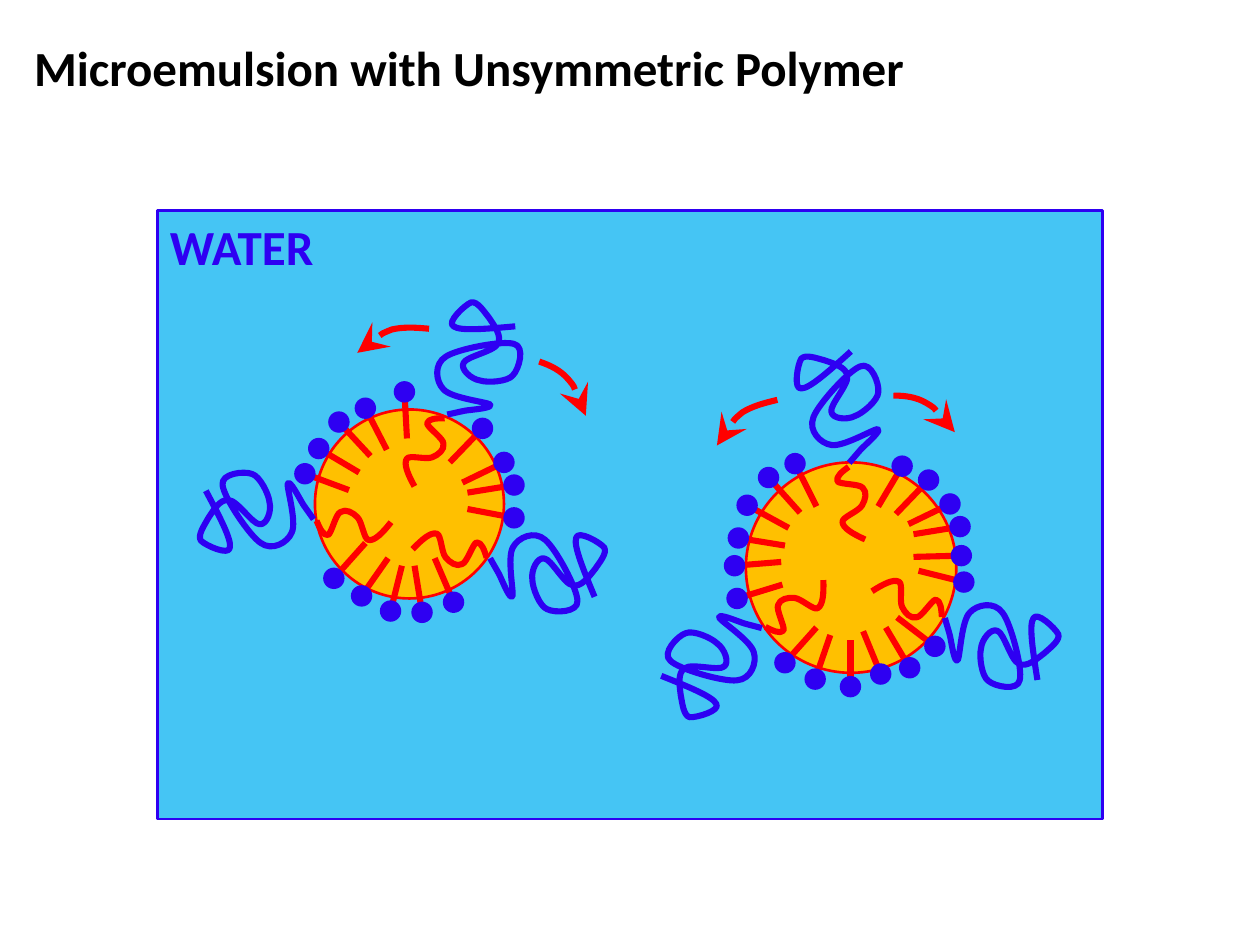
from dataclasses import dataclass

import pptx
import pptx.dml.color
import pptx.enum.shapes
import pptx.enum.text
import pptx.oxml
import pptx.oxml.ns
import pptx.util

Inches = pptx.util.Inches
Pt = pptx.util.Pt
RGBColor = pptx.dml.color.RGBColor
Shape = pptx.enum.shapes.MSO_SHAPE

BLACK = RGBColor(0x00, 0x00, 0x00)
BLUE = RGBColor(0x2E, 0x00, 0xF2)
RED = RGBColor(0xFF, 0x00, 0x00)
GOLD = RGBColor(0xFF, 0xC0, 0x00)
WATER = RGBColor(0x00, 0xB0, 0xF0)

THICK, THIN = 3.5, 1.5
DOT = 0.17

# Curves in inches: a start, then three points for each Bezier piece
CHAIN = [
    (.09, .54), (.04, .45), (0, .36), (.03, .32), (.05, .29), (.18, .33),
    (.23, .31), (.28, .29), (.33, .25), (.32, .2), (.32, .16), (.19, .07),
    (.19, .04), (.2, 0), (.27, 0), (.33, 0),
]
COIL = [
    (.11, .9), (.16, .89), (.2, .88), (.25, .87), (.31, .86), (.48, .85),
    (.45, .82), (.42, .8), (.14, .77), (.08, .7), (.02, .64), (0, .5),
    (.1, .44), (.19, .38), (.55, .31), (.64, .34), (.73, .36), (.68, .54),
    (.63, .59), (.59, .64), (.43, .65), (.37, .63), (.3, .62), (.21, .54),
    (.24, .49), (.26, .44), (.48, .4), (.51, .34), (.55, .28), (.48, .19),
    (.44, .13), (.4, .08), (.35, 0), (.3, .01), (.25, .03), (.1, .17),
    (.16, .2), (.21, .24), (.43, .22), (.65, .2),
]
EAST = [(0, 0), (.09, .03), (.17, .07), (.23, .14), (.29, .21), (.33, .32), (.37, .43)]
WEST = [(.42, 0), (.32, .04), (.23, .08), (.16, .14), (.09, .22), (.04, .32), (0, .43)]


@dataclass
class Polymer:
    chain: tuple[float, float]
    coil: tuple[float, float]
    turn: float


@dataclass
class Arrow:
    curve: list[tuple[float, float]]
    left: float
    top: float
    turn: float


@dataclass
class Drop:
    left: float
    top: float
    size: float
    polymers: list[Polymer]
    soaps: list[tuple[float, float, float, float]]  # tail x, y, head x, y
    arrows: list[Arrow]


DROPS = [
    Drop(
        2.5, 3.25, 1.5,
        [
            Polymer((3.2, 3.32), (3.44, 2.39), 0),
            Polymer((3.39, 4.08), (4.03, 4.09), 72.6),
            Polymer((2.66, 3.91), (1.61, 3.61), 247.2),
        ],
        [
            (3.67, 3.83, 4, 3.67), (3.71, 3.91, 4.08, 3.85),
            (3.29, 4.49, 3.35, 4.86), (3.71, 4.04, 4.08, 4.11),
            (3.45, 4.43, 3.6, 4.78), (3.19, 4.49, 3.1, 4.85),
            (3.57, 3.67, 3.83, 3.4), (3.08, 4.43, 2.87, 4.73),
            (2.9, 4.31, 2.65, 4.59), (2.77, 3.89, 2.42, 3.76),
            (2.85, 3.75, 2.53, 3.56), (2.94, 3.62, 2.69, 3.35),
            (3.07, 3.57, 2.9, 3.24), (3.23, 3.48, 3.21, 3.11),
        ],
        [Arrow(EAST, 4.28, 2.87, 0), Arrow(WEST, 2.91, 2.49, 27.1)],
    ),
    Drop(
        5.92, 3.67, 1.67,
        [
            Polymer((6.6, 3.75), (6.31, 2.71), 323.2),
            Polymer((6.18, 4.54), (5.25, 4.82), 207),
            Polymer((7.03, 4.48), (7.6, 4.68), 86.2),
        ],
        [
            (7.21, 4.16, 7.54, 4), (7.25, 4.24, 7.62, 4.18),
            (7.25, 4.42, 7.63, 4.41), (7.11, 4.08, 7.37, 3.81),
            (6.85, 5.01, 6.99, 5.35), (7.03, 4.98, 7.22, 5.3),
            (6.75, 5.08, 6.75, 5.45), (6.59, 5.04, 6.47, 5.39),
            (6.48, 4.98, 6.23, 5.26), (7.12, 4.9, 7.42, 5.13),
            (7.29, 4.53, 7.65, 4.62), (6.97, 4.02, 7.16, 3.7),
            (6.26, 4.19, 5.93, 4.01), (6.35, 4.07, 6.1, 3.79),
            (6.48, 4.02, 6.31, 3.68), (6.2, 4.46, 5.83, 4.49),
            (6.23, 4.33, 5.86, 4.27), (6.21, 4.64, 5.85, 4.75),
        ],
        [Arrow(EAST, 7.15, 3.07, 341.5), Arrow(WEST, 5.72, 3.14, 8.6)],
    ),
]


def add_node(parent, tag: str, **attrs: str):
    node = pptx.oxml.parse_xml(f"<{tag} {pptx.oxml.ns.nsdecls('a')}/>")
    for key, value in attrs.items():
        node.set(key, value)
    parent.append(node)
    return node


def set_line(shape, color: RGBColor, width: float) -> None:
    shape.line.color.rgb = color
    shape.line.width = Pt(width)


def add_shape(shapes, kind, left: float, top: float, wide: float, high: float, fill: RGBColor):
    shape = shapes.add_shape(kind, Inches(left), Inches(top), Inches(wide), Inches(high))
    shape.shadow.inherit = False
    shape.fill.solid()
    shape.fill.fore_color.rgb = fill
    return shape


def add_curve(shapes, points, left: float, top: float, turn: float, color: RGBColor):
    spots = [(Inches(left + x), Inches(top + y)) for x, y in points]
    pen = shapes.build_freeform(*spots[0])
    pen.add_line_segments(spots[1:], close=False)
    shape = pen.convert_to_shape()
    # Turn each three straight steps into one Bezier piece
    path = shape.element.xpath(".//a:path")[0]
    steps = path.xpath("./a:lnTo")
    for i in range(0, len(steps), 3):
        bend = add_node(path, "a:cubicBezTo")
        for step in steps[i:i + 3]:
            bend.append(step[0])
            path.remove(step)
    shape.rotation = turn
    shape.shadow.inherit = False
    shape.fill.background()
    set_line(shape, color, THICK)
    return shape


def add_soap(shapes, x1: float, y1: float, x2: float, y2: float) -> None:
    tail = shapes.add_connector(
        pptx.enum.shapes.MSO_CONNECTOR.STRAIGHT, Inches(x1), Inches(y1), Inches(x2), Inches(y2))
    set_line(tail, RED, THICK)
    add_node(tail.element.spPr, "a:effectLst")
    head = add_shape(shapes, Shape.OVAL, x2 - DOT / 2, y2 - DOT / 2, DOT, DOT, BLUE)
    head.line.fill.background()


def set_text(shape, text: str, color: RGBColor) -> None:
    frame = shape.text_frame
    frame.text = text
    frame.vertical_anchor = pptx.enum.text.MSO_ANCHOR.TOP
    line = frame.paragraphs[0]
    line.alignment = pptx.enum.text.PP_ALIGN.LEFT
    line.font.name = "Calibri"
    line.font.size = Pt(28)
    line.font.bold = True
    line.font.color.rgb = color


def main() -> None:
    deck = pptx.Presentation()
    deck.slide_width, deck.slide_height = Inches(10), Inches(7.5)
    slide = deck.slides.add_slide(deck.slide_layouts[5])
    shapes = slide.shapes

    # Title
    title = shapes.title
    title.left, title.top = Inches(0.17), Inches(0.25)
    title.width, title.height = Inches(7.18), Inches(0.57)
    set_text(title, "Microemulsion with Unsymmetric Polymer", BLACK)
    title.text_frame.word_wrap = False
    title.text_frame.auto_size = pptx.enum.text.MSO_AUTO_SIZE.SHAPE_TO_FIT_TEXT

    # Water
    water = add_shape(shapes, Shape.RECTANGLE, 1.25, 1.67, 7.5, 4.83, WATER)
    set_line(water, BLUE, THIN)
    add_node(water.element.spPr.xpath("./a:solidFill/a:srgbClr")[0], "a:alpha", val="73000")
    set_text(water, "WATER", BLUE)

    # Oil drops with their polymers, soaps and arrows
    for drop in DROPS:
        oil = add_shape(shapes, Shape.OVAL, drop.left, drop.top, drop.size, drop.size, GOLD)
        set_line(oil, RED, THIN)
        for poly in drop.polymers:
            add_curve(shapes, CHAIN, *poly.chain, poly.turn, RED)
            add_curve(shapes, COIL, *poly.coil, poly.turn, BLUE)
        for soap in drop.soaps:
            add_soap(shapes, *soap)
        for arrow in drop.arrows:
            curve = add_curve(shapes, arrow.curve, arrow.left, arrow.top, arrow.turn, RED)
            add_node(curve.line._get_or_add_ln(), "a:tailEnd", type="stealth", w="lg", len="lg")

    deck.save("out.pptx")


if __name__ == "__main__":
    main()
